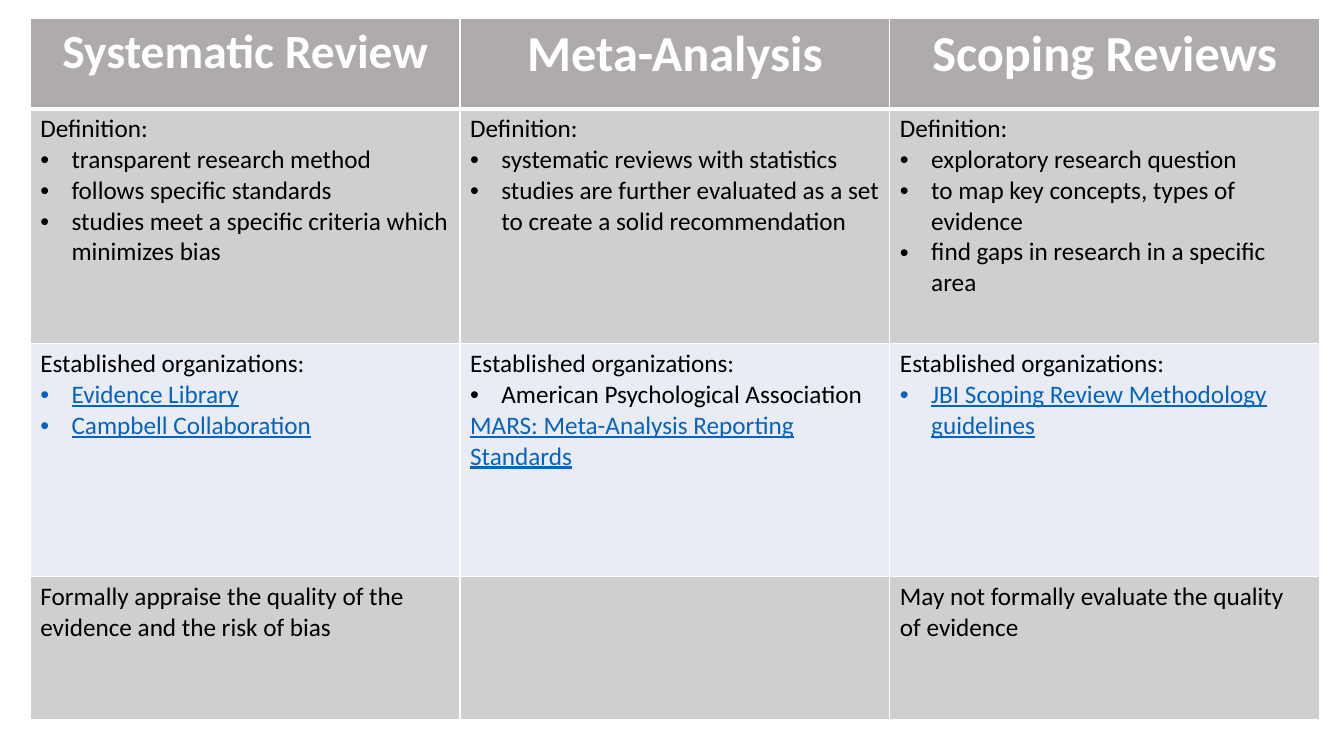
from lxml import etree
from pptx import Presentation
from pptx import util as u
from pptx.dml.color import RGBColor
from pptx.enum import text
from pptx.oxml import ns

COLORS = {"header": "AFABAB", "grey": "D0CECE", "pale": "E9EBF5",
          "white": "FFFFFF", "black": "000000", "link": "0563C1"}

HEADINGS = [("Systematic Review", 34), ("Meta-Analysis", 36), ("Scoping Reviews", 36)]
DEFINITION = ("Definition:", "plain")
ORGANIZATIONS = ("Established organizations:", "plain")

COMPARISON = [
    [
        [DEFINITION,
         ("transparent research method", "bullet"),
         ("follows specific standards", "bullet"),
         ("studies meet a specific criteria which minimizes bias", "bullet")],
        [DEFINITION,
         ("systematic reviews with statistics", "bullet"),
         ("studies are further evaluated as a set to create a solid recommendation", "bullet")],
        [DEFINITION,
         ("exploratory research question", "bullet"),
         ("to map key concepts, types of evidence", "bullet"),
         ("find gaps in research in a specific area", "bullet")],
    ],
    [
        [ORGANIZATIONS,
         ("Evidence Library", "bullet link"),
         ("Campbell Collaboration", "bullet link")],
        [ORGANIZATIONS,
         ("American Psychological Association", "bullet"),
         ("MARS: Meta-Analysis Reporting Standards", "link")],
        [ORGANIZATIONS,
         ("JBI Scoping Review Methodology guidelines", "bullet link")],
    ],
    [
        [("Formally appraise the quality of the evidence and the risk of bias", "plain")],
        [],
        [("May not formally evaluate the quality of evidence", "plain")],
    ],
]


def dress_cell(cell, fill, bottom_width):
    properties = cell._tc.get_or_add_tcPr()
    for side, width in (("L", 1), ("R", 1), ("T", 1), ("B", bottom_width)):
        border = etree.SubElement(properties, ns.qn(f"a:ln{side}"), w=str(u.Pt(width)))
        paint = etree.SubElement(border, ns.qn("a:solidFill"))
        etree.SubElement(paint, ns.qn("a:srgbClr"), val=COLORS["white"])
    cell.fill.solid()
    cell.fill.fore_color.rgb = RGBColor.from_string(COLORS[fill])


def add_words(paragraph, words, size, color, bold=False):
    run = paragraph.add_run()
    run.text = words
    run.font.name = "Calibri"
    run.font.size = u.Pt(size)
    run.font.bold = bold
    run.font.underline = color == "link"
    run.font.color.rgb = RGBColor.from_string(COLORS[color])


deck = Presentation()
deck.slide_width = u.Inches(13.33)
deck.slide_height = u.Inches(7.5)
slide = deck.slides.add_slide(deck.slide_layouts[6])

reviews = slide.shapes.add_table(4, 3, u.Inches(0.3), u.Inches(0.18),
                                 u.Inches(12.79), u.Inches(6.96)).table
for column in reviews.columns:
    column.width = u.Inches(12.79 / 3)
for row, height in zip(reviews.rows, (0.9, 2.33, 2.31, 1.42)):
    row.height = u.Inches(height)

for col, (heading, size) in enumerate(HEADINGS):
    cell = reviews.cell(0, col)
    dress_cell(cell, "header", 3)
    paragraph = cell.text_frame.paragraphs[0]
    paragraph.alignment = text.PP_ALIGN.CENTER
    add_words(paragraph, heading, size, "white", bold=True)

for row, (fill, topics) in enumerate(zip(("grey", "pale", "grey"), COMPARISON), start=1):
    for col, points in enumerate(topics):
        cell = reviews.cell(row, col)
        dress_cell(cell, fill, 1)
        for index, (words, style) in enumerate(points):
            frame = cell.text_frame
            paragraph = frame.add_paragraph() if index else frame.paragraphs[0]
            if "bullet" in style:
                indent = u.Inches(0.31)
                layout = paragraph._p.get_or_add_pPr()
                layout.set("marL", str(indent))
                layout.set("indent", str(-indent))
                etree.SubElement(layout, ns.qn("a:buFont"), typeface="Arial")
                etree.SubElement(layout, ns.qn("a:buChar"), char="•")
            add_words(paragraph, words, 18, "link" if "link" in style else "black")

deck.save("out.pptx")
